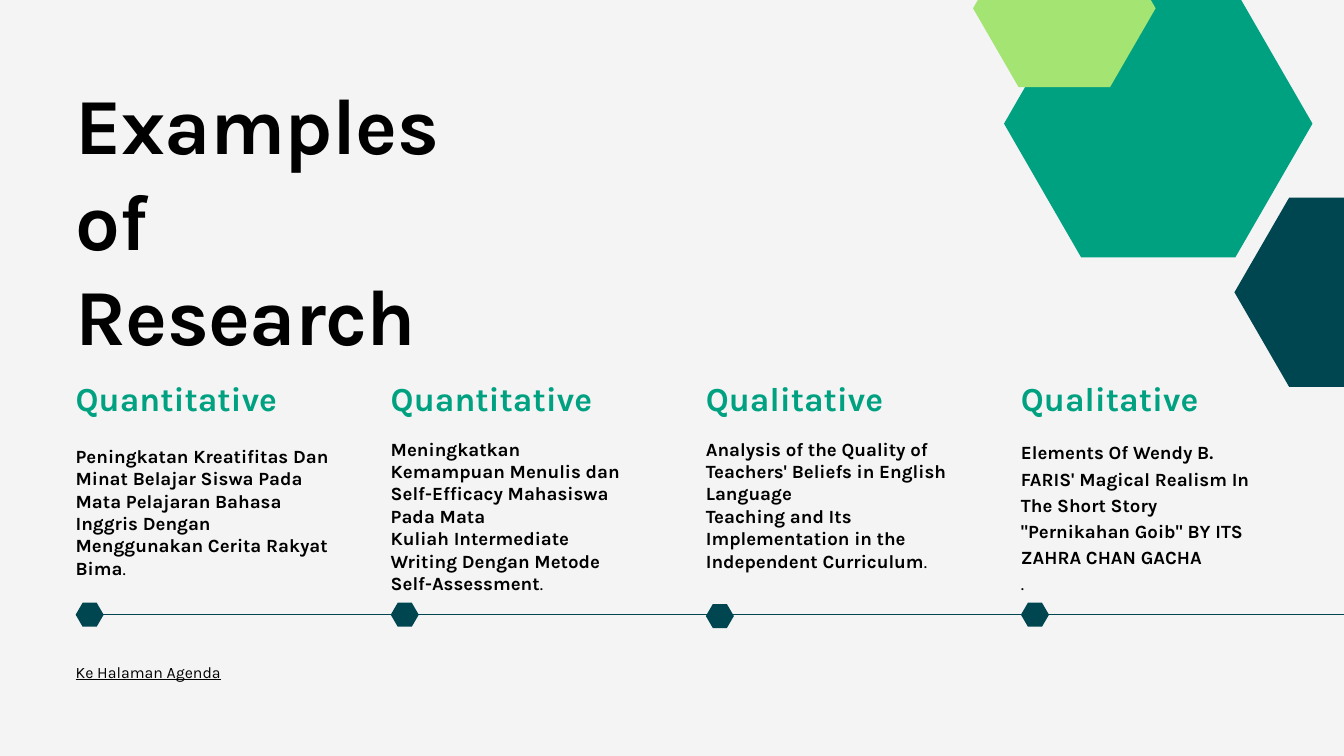
from lxml.etree import SubElement
from pptx import Presentation
from pptx.dml.color import RGBColor
from pptx.enum.shapes import MSO_CONNECTOR, MSO_SHAPE
from pptx.enum.text import MSO_AUTO_SIZE
from pptx.oxml.ns import qn
from pptx.util import Cm, Pt

COLOURS = {
    "background": "F4F4F4",
    "text": "000000",
    "green": "00A181",
    "lime": "A4E473",
    "navy": "004651",
}
FONT = "Karla"

LEFT = 2.86
COLUMN_PITCH = 11.91
TIMELINE_Y = 23.24
MARKER_WIDTH, MARKER_HEIGHT = 1.06, 0.91

# heading, body paragraphs, body top, width, line spacing in points, marker drop
COLUMNS = [
    ("Quantitative",
     ["Peningkatan Kreatifitas Dan Minat Belajar Siswa Pada Mata Pelajaran Bahasa",
      "Inggris Dengan Menggunakan Cerita Rakyat Bima."],
     16.81, 10.03, None, 0),
    ("Quantitative",
     ["Meningkatkan Kemampuan Menulis dan Self-Efficacy Mahasiswa Pada Mata",
      "Kuliah Intermediate Writing Dengan Metode Self-Assessment."],
     16.54, 9.35, None, 0),
    ("Qualitative",
     ["Analysis of the Quality of Teachers' Beliefs in English Language",
      "Teaching and Its Implementation in the Independent Curriculum."],
     16.54, 9.35, None, 0.05),
    ("Qualitative",
     ["Elements Of Wendy B. FARIS' Magical Realism In The Short Story "
      "\"Pernikahan Goib\" BY ITS ZAHRA CHAN GACHA",
      "."],
     16.54, 9.35, 28, 0),
]

# left, top, width, height, colour
HEXAGONS = [
    (46.66, 7.47, 8.28, 7.16, "navy"),
    (37.95, -0.38, 11.66, 10.11, "green"),
    (36.78, -2.67, 6.9, 5.97, "lime"),
]


class SlideBuilder:
    def __init__(self, page):
        self.page = page

    def colour(self, name):
        return RGBColor.from_string(COLOURS[name])

    def background(self, name):
        fill = self.page.background.fill
        fill.solid()
        fill.fore_color.rgb = self.colour(name)

    def line(self, x1, y1, x2, y2, name):
        line = self.page.shapes.add_connector(
            MSO_CONNECTOR.STRAIGHT, Cm(x1), Cm(y1), Cm(x2), Cm(y2))
        line.line.color.rgb = self.colour(name)
        line.line.width = Pt(1.5)
        SubElement(line._element.spPr, qn("a:effectLst"))

    def hexagon(self, left, top, width, height, name):
        """Draw a hexagon whose flat edges are half its width."""
        shape = self.page.shapes.add_shape(
            MSO_SHAPE.HEXAGON, Cm(left), Cm(top), Cm(width), Cm(height))
        shape.adjustments[0] = width / 4 / height
        shape.shadow.inherit = False
        shape.fill.solid()
        shape.fill.fore_color.rgb = self.colour(name)
        shape.line.fill.background()

    def text(self, left, top, width, height, paragraphs, size, name="text",
             bold=True, underline=None, spacing=None, tracking=None):
        """Add a text box; spacing is in points, tracking in hundredths."""
        box = self.page.shapes.add_textbox(Cm(left), Cm(top), Cm(width), Cm(height))
        frame = box.text_frame
        frame.margin_left = frame.margin_right = 0
        frame.margin_top = frame.margin_bottom = 0
        frame.word_wrap = True
        frame.auto_size = MSO_AUTO_SIZE.SHAPE_TO_FIT_TEXT
        frame.text = "\n".join(paragraphs)
        for para in frame.paragraphs:
            if spacing:
                para.line_spacing = Pt(spacing)
            for span in para.runs:
                self.format(span, size, name, bold, underline)
                if tracking:
                    span._r.get_or_add_rPr().set("spc", str(tracking))
        return box

    def format(self, span, size, name, bold, underline=None):
        span.font.name = FONT
        span.font.size = Pt(size)
        span.font.bold = bold
        span.font.underline = underline
        span.font.color.rgb = self.colour(name)

    def body(self, left, top, width, paragraphs, spacing):
        """Add bold body text that ends in a full stop of regular weight."""
        box = self.text(left, top, width, 4.9, paragraphs, 20, spacing=spacing)
        last = box.text_frame.paragraphs[-1]
        words = last.runs[0]
        if words.text == ".":
            words.font.bold = False
            return
        words.text = words.text.removesuffix(".")
        stop = last.add_run()
        stop.text = "."
        self.format(stop, 20, "text", False)


def main():
    deck = Presentation()
    deck.slide_width, deck.slide_height = Cm(50.8), Cm(28.58)
    slide = SlideBuilder(deck.slides.add_slide(deck.slide_layouts[6]))
    slide.background("background")
    slide.line(3.53, TIMELINE_Y, 50.8, TIMELINE_Y, "navy")

    for index, (heading, body, top, width, spacing, drop) in enumerate(COLUMNS):
        left = LEFT + index * COLUMN_PITCH
        slide.text(left, 14.29, width, 1.52, [heading], 36, "green", spacing=43.2)
        slide.body(left, top, width, body, spacing)
        slide.hexagon(left, TIMELINE_Y - MARKER_HEIGHT / 2 + drop,
                      MARKER_WIDTH, MARKER_HEIGHT, "navy")

    slide.text(LEFT, 2.86, 15.82, 7.16, ["Examples of Research"], 85,
               spacing=102, tracking=-80)
    slide.text(LEFT, 24.92, 14.53, 0.81, ["Ke Halaman Agenda"], 17,
               bold=False, underline=True, spacing=23.8)
    for hexagon in HEXAGONS:
        slide.hexagon(*hexagon)

    deck.save("out.pptx")


if __name__ == "__main__":
    main()
